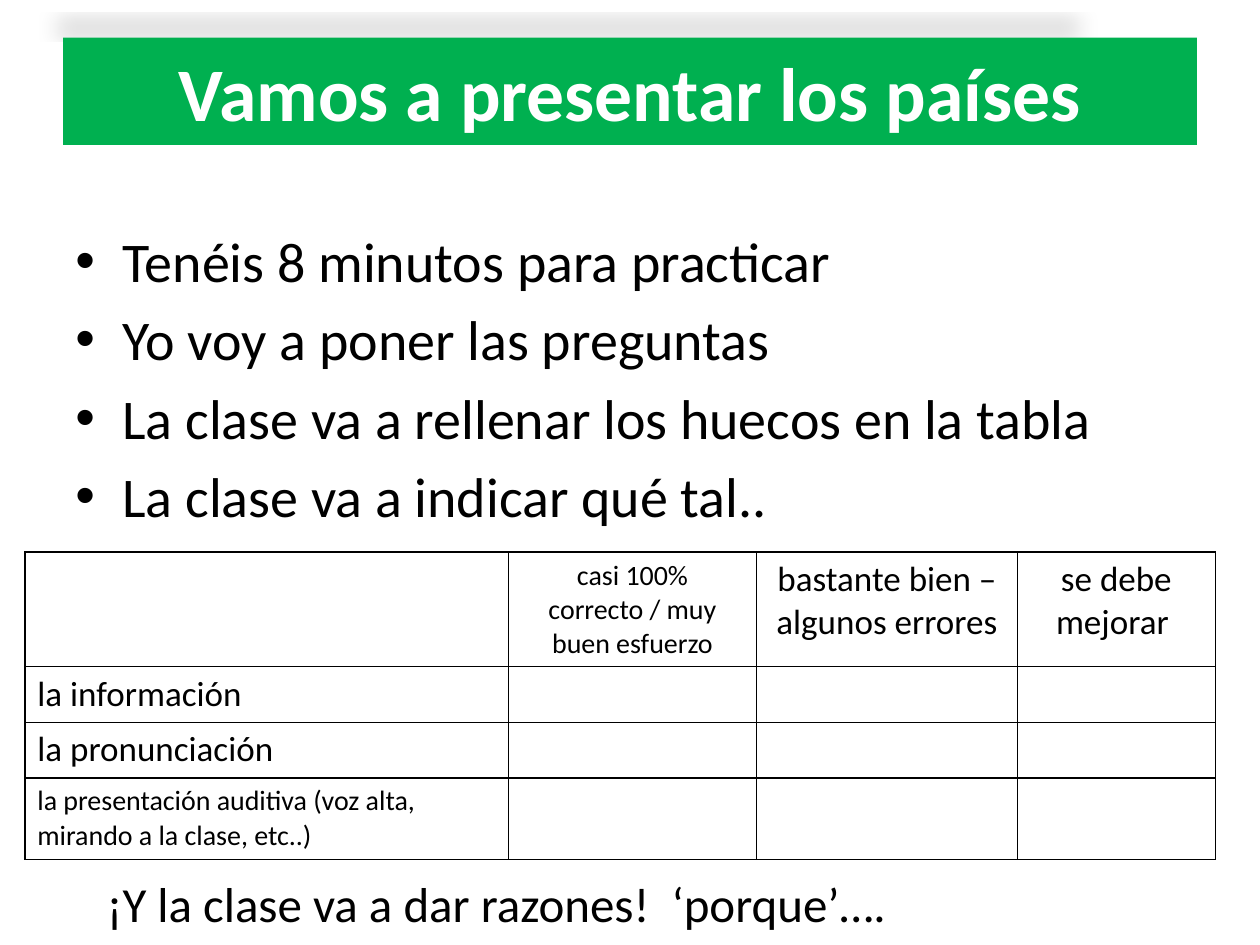
from lxml.etree import SubElement
from pptx import Presentation
from pptx.dml.color import RGBColor
from pptx.enum.text import MSO_ANCHOR as Anchor, MSO_AUTO_SIZE as AutoSize, PP_ALIGN as Align
from pptx.oxml.ns import qn
from pptx.util import Cm, Pt

FONT = "Calibri"
TITLE = "Vamos a presentar los países"
STEPS = [
    "Tenéis 8 minutos para practicar",
    "Yo voy a poner las preguntas",
    "La clase va a rellenar los huecos en la tabla",
    "La clase va a indicar qué tal..",
]
RATINGS = [
    ("casi 100% correcto / muy buen esfuerzo", 16),
    ("bastante bien –algunos errores", 20),
    ("se debe mejorar ", 20),
]
CRITERIA = [
    ("la información", 20),
    ("la pronunciación", 20),
    ("la presentación auditiva (voz alta, mirando a la clase, etc..)", 16),
]
CLOSING = "¡Y la clase va a dar razones!  ‘porque’…."
COLUMN_WIDTHS = [9.75, 5, 5.26, 3.99]
ROW_HEIGHTS = [2.31, 1.12, 1.12, 1.65]


def color(hex_code):
    """Return the colour for a hex string."""
    return RGBColor.from_string(hex_code)


def write(paragraph, wording, size, hex_code="000000", align=Align.LEFT, bold=False):
    """Put formatted wording into a paragraph."""
    run = paragraph.add_run()
    run.text = wording
    paragraph.alignment = align
    for name, value in {"name": FONT, "size": Pt(size), "bold": bold}.items():
        setattr(run.font, name, value)
    run.font.color.rgb = color(hex_code)


def add_bullet(paragraph, indent):
    """Give a paragraph a round bullet with a hanging indent."""
    properties = paragraph._p.get_or_add_pPr()
    properties.set("marL", str(indent))
    properties.set("indent", str(-indent))
    SubElement(properties, qn("a:buFont"), typeface="Arial")
    SubElement(properties, qn("a:buChar"), char="•")


def add_shadow(shape):
    """Cast a soft, flattened perspective shadow from a shape."""
    shape.shadow.inherit = False
    effects = shape._element.spPr.find(qn("a:effectLst"))
    shadow = SubElement(effects, qn("a:outerShdw"), blurRad=str(Pt(12)),
                        dist=str(Pt(25)), dir="5400000", sx="90000",
                        sy="-19000", rotWithShape="0")
    black = SubElement(shadow, qn("a:srgbClr"), val="000000")
    SubElement(black, qn("a:alpha"), val="15000")


def add_borders(cell):
    """Draw a thin black line on each side of a cell."""
    properties = cell._tc.get_or_add_tcPr()
    for side in ("lnL", "lnR", "lnT", "lnB"):
        line = SubElement(properties, qn(f"a:{side}"), w=str(Pt(1)))
        fill = SubElement(line, qn("a:solidFill"))
        SubElement(fill, qn("a:srgbClr"), val="000000")


def place_title(slide, left, top, width, height):
    """Format the title placeholder as a green banner."""
    banner = slide.shapes.title
    box = {"left": left, "top": top, "width": width, "height": height}
    for name, value in box.items():
        setattr(banner, name, Cm(value))
    banner.fill.solid()
    banner.fill.fore_color.rgb = color("00B050")
    add_shadow(banner)
    frame = banner.text_frame
    frame.auto_size = AutoSize.NONE
    frame.vertical_anchor = Anchor.MIDDLE
    write(frame.paragraphs[0], TITLE, 43.2, "FFFFFF", Align.CENTER, True)


def place_steps(slide, left, top, width, height):
    """Add the bulleted list of steps."""
    frame = slide.shapes.add_textbox(Cm(left), Cm(top), Cm(width), Cm(height)).text_frame
    frame.word_wrap = True
    for index, step in enumerate(STEPS):
        paragraph = frame.add_paragraph() if index else frame.paragraphs[0]
        write(paragraph, step, 32)
        paragraph.space_before = Pt(6.4)
        add_bullet(paragraph, Cm(0.95))


def place_rubric(slide, left, top):
    """Add the table in which the class rates each presentation."""
    table = slide.shapes.add_table(
        len(ROW_HEIGHTS), len(COLUMN_WIDTHS), Cm(left), Cm(top),
        Cm(sum(COLUMN_WIDTHS)), Cm(sum(ROW_HEIGHTS))).table
    for name in ("first_row", "horz_banding"):
        setattr(table, name, False)
    for column, width in zip(table.columns, COLUMN_WIDTHS):
        column.width = Cm(width)
    for row, height in zip(table.rows, ROW_HEIGHTS):
        row.height = Cm(height)
    for cell in table.iter_cells():
        add_borders(cell)
        cell.fill.background()
    for index, (rating, size) in enumerate(RATINGS, 1):
        write(table.cell(0, index).text_frame.paragraphs[0], rating, size, align=Align.CENTER)
    for index, (criterion, size) in enumerate(CRITERIA, 1):
        write(table.cell(index, 0).text_frame.paragraphs[0], criterion, size)


def place_closing(slide, left, top, width, height):
    """Add the closing remark below the table."""
    frame = slide.shapes.add_textbox(Cm(left), Cm(top), Cm(width), Cm(height)).text_frame
    frame.word_wrap = True
    frame.auto_size = AutoSize.SHAPE_TO_FIT_TEXT
    write(frame.paragraphs[0], CLOSING, 28)


def main():
    """Build and save the slide."""
    deck = Presentation()
    deck.slide_width, deck.slide_height = Cm(25.4), Cm(19.05)
    slide = deck.slides.add_slide(deck.slide_layouts[5])
    place_title(slide, 1.27, 0.76, 22.86, 2.16)
    place_steps(slide, 1.27, 4.44, 22.86, 6.88)
    place_rubric(slide, 0.5, 11.13)
    place_closing(slide, 1.9, 17.48, 20.6, 1.45)
    deck.save("out.pptx")


if __name__ == "__main__":
    main()
